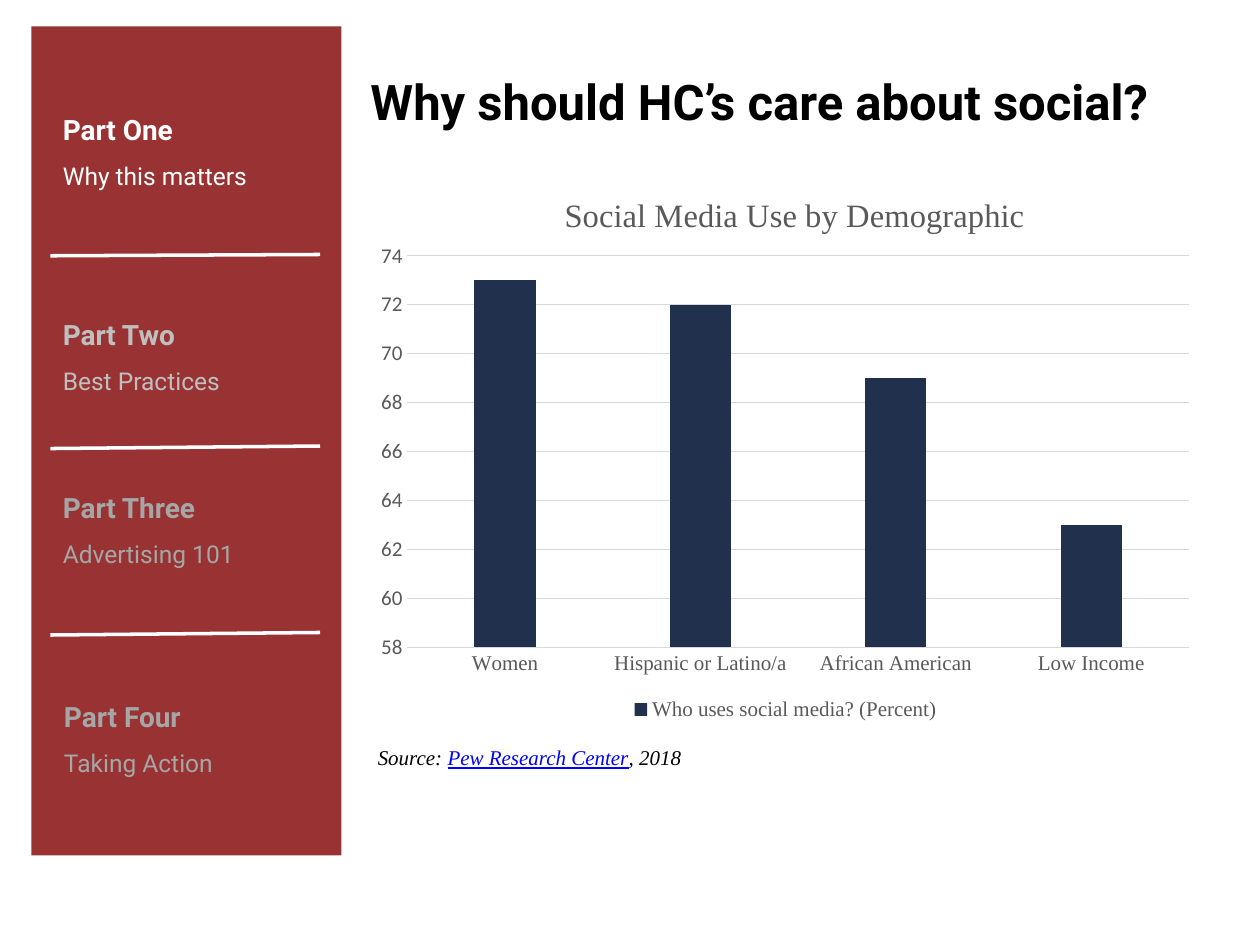
from dataclasses import dataclass

import pptx
import pptx.chart.data
import pptx.dml.color
import pptx.enum.chart
import pptx.enum.shapes
import pptx.enum.text
import pptx.oxml
import pptx.oxml.ns
import pptx.util
from pptx.util import Inches, Pt

SERIF = "Times New Roman"
GRAY, GRID, NAVY, WHITE = "595959", "D9D9D9", "21314D", "FFFFFF"


@dataclass
class Part:
    name: str
    topic: str
    left: float
    top: float
    color: str


@dataclass
class Divider:
    start: float
    end: float


PARTS = [
    Part("Part One", "Why this matters", 0.4, 0.71, WHITE),
    Part("Part Two", "Best Practices", 0.4, 2.34, "BFBFBF"),
    Part("Part Three", "Advertising 101", 0.4, 3.71, "A6A6A6"),
    Part("Part Four", "Taking Action", 0.41, 5.37, "A6A6A6"),
]
DIVIDERS = [Divider(2.03, 2.02), Divider(3.56, 3.54), Divider(5.04, 5.02)]


def rgb(value: str) -> pptx.dml.color.RGBColor:
    return pptx.dml.color.RGBColor.from_string(value)


def set_font(font, name: str, size: float, color: str, bold=False, italic=False) -> None:
    font.name, font.size, font.bold, font.italic = name, Pt(size), bold, italic
    font.color.rgb = rgb(color)


def add_part(page, part: Part) -> None:
    box = page.shapes.add_textbox(Inches(part.left), Inches(part.top), Inches(2.14), Inches(0.83))
    frame = box.text_frame
    frame.word_wrap = True
    frame.text = f"{part.name}\n{part.topic}"
    for paragraph, size, bold in zip(frame.paragraphs, (16, 14), (True, False)):
        paragraph.line_spacing = 1.5
        set_font(paragraph.font, "Roboto", size, part.color, bold)


def add_divider(page, divider: Divider) -> None:
    line = page.shapes.add_connector(
        pptx.enum.shapes.MSO_CONNECTOR.STRAIGHT,
        Inches(0.4), Inches(divider.start), Inches(2.54), Inches(divider.end))
    line.line.color.rgb = rgb(WHITE)
    line.line.width = Pt(2)
    properties = line._element.spPr
    properties.append(properties.makeelement(pptx.oxml.ns.qn("a:effectLst"), {}))


def place(element, index: int, inner: bool = False, **fractions: float) -> None:
    """Give a chart part a manual layout, in fractions of the chart size."""
    for old in element.findall(pptx.oxml.ns.qn("c:layout")):
        element.remove(old)
    target = '<c:layoutTarget val="inner"/>' if inner else ""
    modes = '<c:xMode val="edge"/><c:yMode val="edge"/>'
    values = "".join(f'<c:{key} val="{value}"/>' for key, value in fractions.items())
    element.insert(index, pptx.oxml.parse_xml(
        f'<c:layout {pptx.oxml.ns.nsdecls("c")}><c:manualLayout>'
        f"{target}{modes}{values}</c:manualLayout></c:layout>"))


def add_usage_chart(page) -> None:
    data = pptx.chart.data.CategoryChartData()
    data.categories = ["Women", "Hispanic or Latino/a", "African American", "Low Income"]
    data.add_series("Who uses social media? (Percent)", (73, 72, 69, 63))
    chart = page.shapes.add_chart(
        pptx.enum.chart.XL_CHART_TYPE.COLUMN_CLUSTERED,
        Inches(2.9), Inches(1.32), Inches(6.67), Inches(4.44), data).chart
    set_font(chart.font, "Calibri", 10, "000000")

    chart.has_title = True
    title = chart.chart_title
    title.text_frame.text = "Social Media Use by Demographic"
    set_font(title.text_frame.paragraphs[0].font, SERIF, 18.6, GRAY)
    title.include_in_layout = False
    place(title._element, 1, x=0.23, y=0.04)
    place(chart._chartSpace.chart.plotArea, 0, inner=True, x=0.05, y=0.16, w=0.93, h=0.7)

    chart.has_legend = True
    chart.legend.position = pptx.enum.chart.XL_LEGEND_POSITION.BOTTOM
    chart.legend.include_in_layout = False
    set_font(chart.legend.font, SERIF, 12, GRAY)

    plot = chart.plots[0]
    plot.gap_width, plot.overlap, plot.vary_by_categories = 219, -27, False
    fill = plot.series[0].format.fill
    fill.solid()
    fill.fore_color.rgb = rgb(NAVY)

    categories, values = chart.category_axis, chart.value_axis
    for axis, font in ((categories, SERIF), (values, "Calibri")):
        axis.major_tick_mark = axis.minor_tick_mark = pptx.enum.chart.XL_TICK_MARK.NONE
        set_font(axis.tick_labels.font, font, 12, GRAY)
    values.minimum_scale, values.maximum_scale, values.major_unit = 58, 74, 2
    values.format.line.fill.background()
    values.has_major_gridlines = True
    for line in (categories.format.line, values.major_gridlines.format.line):
        line.color.rgb = rgb(GRID)
        line.width = Pt(0.75)


def add_source(page) -> None:
    box = page.shapes.add_textbox(Inches(2.9), Inches(5.86), Inches(2.87), Inches(0.3))
    box.text_frame.word_wrap = False
    paragraph = box.text_frame.paragraphs[0]
    set_font(paragraph.font, SERIF, 12, "000000", italic=True)
    for text in ("Source: ", "Pew Research Center", ", 2018"):
        paragraph.add_run().text = text
    center = paragraph.runs[1].font
    center.color.rgb = rgb("0000FF")
    center.underline = True


def set_title(page) -> None:
    title = page.shapes.title
    title.left, title.top, title.width, title.height = (
        Inches(2.84), Inches(0.4), Inches(6.8), Inches(0.8))
    frame = title.text_frame
    frame.text = "Why should HC’s care about social?"
    frame.auto_size = pptx.enum.text.MSO_AUTO_SIZE.NONE
    frame.vertical_anchor = pptx.enum.text.MSO_ANCHOR.MIDDLE
    paragraph = frame.paragraphs[0]
    paragraph.alignment = pptx.enum.text.PP_ALIGN.LEFT
    set_font(paragraph.font, "Roboto", 28, "000000", bold=True)


def add_sidebar(page) -> None:
    panel = page.shapes.add_shape(
        pptx.enum.shapes.MSO_SHAPE.RECTANGLE,
        Inches(0.25), Inches(0.21), Inches(2.46), Inches(6.58))
    panel.shadow.inherit = False
    panel.fill.solid()
    panel.fill.fore_color.rgb = rgb("993333")
    panel.line.fill.background()
    for part in PARTS:
        add_part(page, part)
    for divider in DIVIDERS:
        add_divider(page, divider)


def main() -> None:
    deck = pptx.Presentation()
    deck.slide_width, deck.slide_height = Inches(10), Inches(7.5)
    page = deck.slides.add_slide(deck.slide_layouts[5])
    set_title(page)
    add_sidebar(page)
    add_usage_chart(page)
    add_source(page)
    deck.save("out.pptx")


if __name__ == "__main__":
    main()
